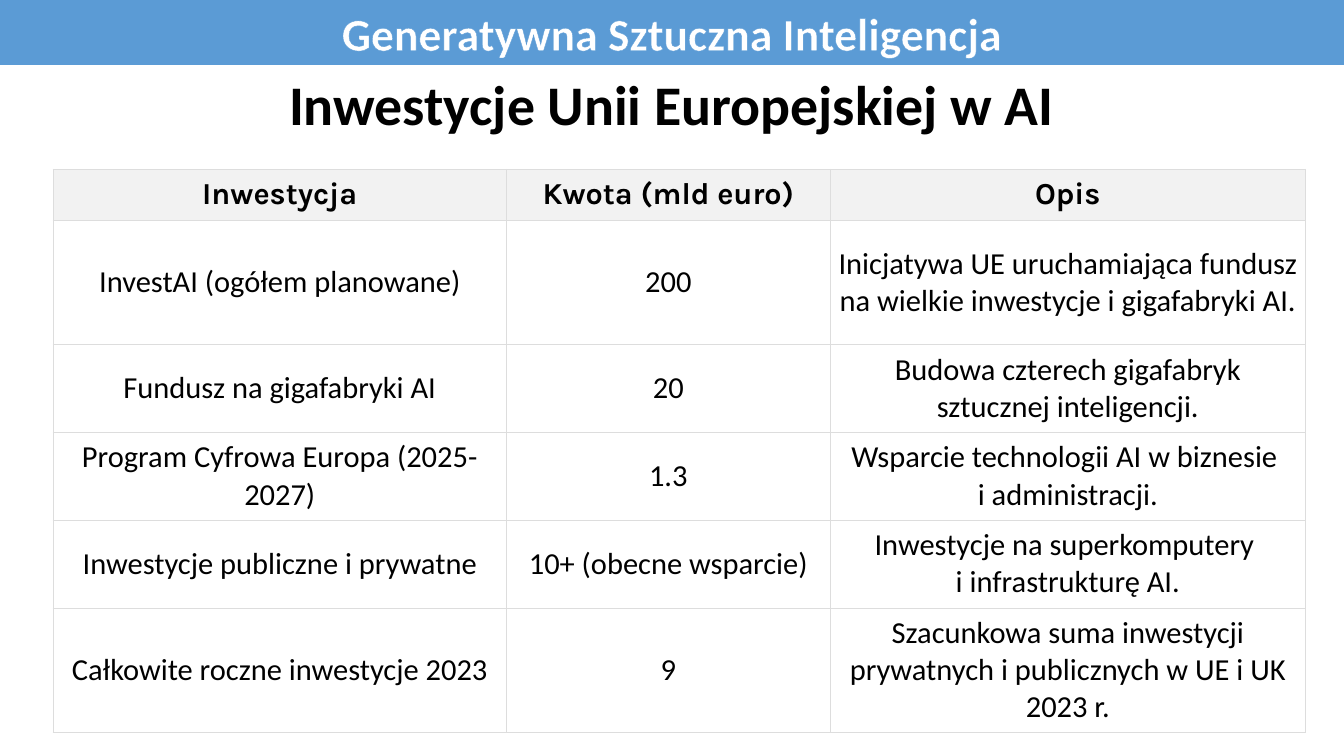
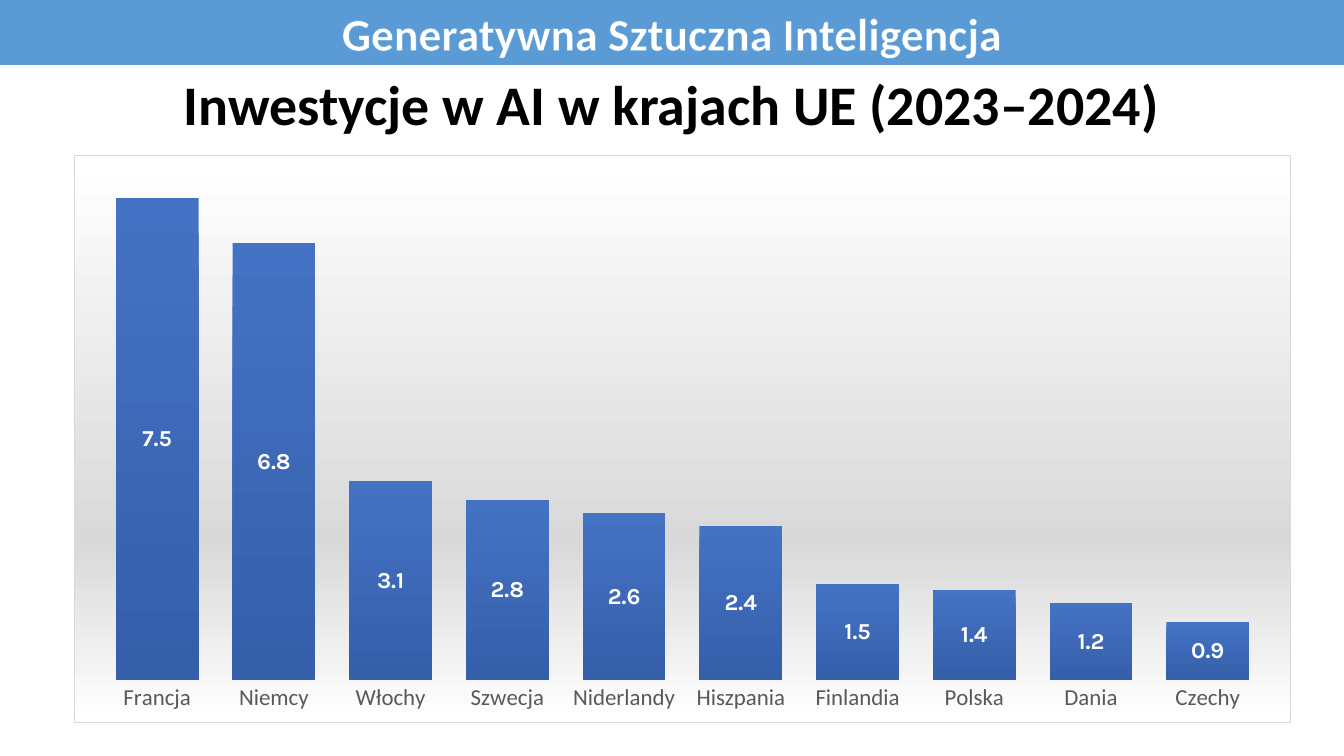
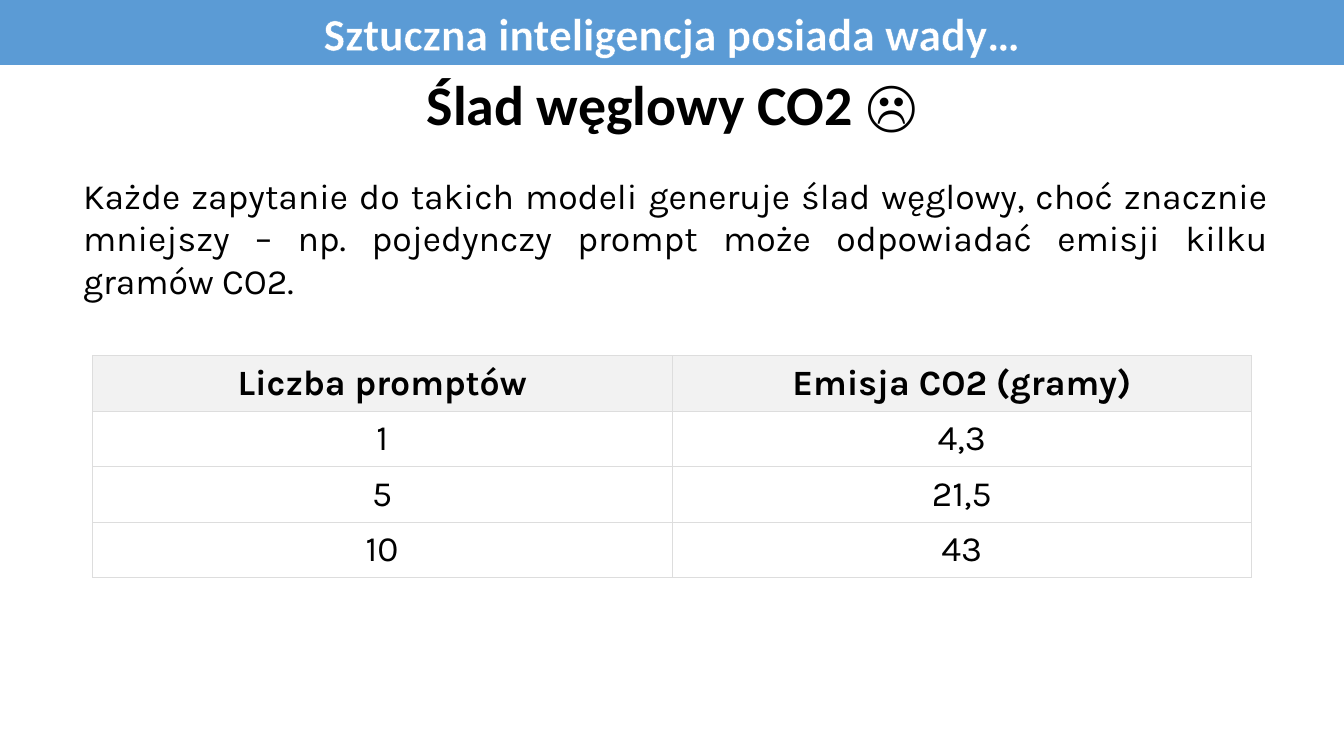
from lxml import etree
from pptx import Presentation
from pptx.chart.data import CategoryChartData
from pptx.dml.color import RGBColor
from pptx.enum.chart import XL_CHART_TYPE as CHART, XL_LABEL_POSITION as LABEL_POS
from pptx.enum.chart import XL_TICK_LABEL_POSITION as TICK_LABEL, XL_TICK_MARK as TICK
from pptx.enum.shapes import MSO_SHAPE as SHAPE
from pptx.enum.text import MSO_ANCHOR as ANCHOR, MSO_AUTO_SIZE as AUTO_SIZE, PP_ALIGN as ALIGN
from pptx.oxml import parse_xml
from pptx.oxml.ns import nsdecls, qn
from pptx.util import Inches, Pt

COLORS = {
    "band": "5B9BD5", "white": "FFFFFF", "text": "000000", "axis": "595959",
    "header": "F2F2F2", "border": "DDDDDD", "frame": "D9D9D9",
    "bar_top": "4472C4", "bar_bottom": "355FA9",
}
BODY, ACCENT = "Calibri", "Karla"
WIDTH, HEIGHT = 14.7, 8.27
BAND_H, TITLE_H = 0.71, 0.84
CELL_INSET = Inches(0.07)

INVESTMENTS = [
    ["Inwestycja", "Kwota (mld euro)", "Opis"],
    ["InvestAI (ogółem planowane)", "200",
     "Inicjatywa UE uruchamiająca fundusz na wielkie inwestycje i gigafabryki AI."],
    ["Fundusz na gigafabryki AI", "20", "Budowa czterech gigafabryk sztucznej inteligencji."],
    ["Program Cyfrowa Europa (2025-2027)", "1.3",
     "Wsparcie technologii AI w biznesie \ni administracji."],
    ["Inwestycje publiczne i prywatne", "10+ (obecne wsparcie)",
     "Inwestycje na superkomputery \ni infrastrukturę AI."],
    ["Całkowite roczne inwestycje 2023", "9",
     "Szacunkowa suma inwestycji prywatnych i publicznych w UE i UK 2023 r."],
]
COUNTRIES = {
    "Francja": 7.5, "Niemcy": 6.8, "Włochy": 3.1, "Szwecja": 2.8, "Niderlandy": 2.6,
    "Hiszpania": 2.4, "Finlandia": 1.5, "Polska": 1.4, "Dania": 1.2, "Czechy": 0.9,
}
EMISSIONS = [
    ["Liczba promptów", "Emisja CO2 (gramy)"],
    ["1", "4,3"], ["5", "21,5"], ["10", "43"],
]
FOOTPRINT = ("Każde zapytanie do takich modeli generuje ślad węglowy, choć znacznie mniejszy "
             "– np. pojedynczy prompt może odpowiadać emisji kilku gramów CO2.")


def rgb(name):
    return RGBColor.from_string(COLORS[name])


def line_xml(tag, color, width):
    return (f'<{tag} {nsdecls("a")} w="{Pt(width)}"><a:solidFill>'
            f'<a:srgbClr val="{COLORS[color]}"/></a:solidFill></{tag}>')


def set_font(font, size, color="text", name=BODY, bold=False):
    font.size, font.name, font.bold = Pt(size), name, bold
    font.color.rgb = rgb(color)


def write(tf, text, align=ALIGN.CENTER, outline=None, **fmt):
    """Fill the first paragraph; each newline becomes a line break."""
    p = tf.paragraphs[0]
    p.alignment = align
    for i, line in enumerate(text.split("\n")):
        if i:
            p.add_line_break()
        r = p.add_run()
        r.text = line
        set_font(r.font, **fmt)
        if outline:
            r.font._element.insert(0, parse_xml(line_xml("a:ln", outline, 0.8)))


def add_text(slide, box, text, **fmt):
    tf = slide.shapes.add_textbox(*map(Inches, box)).text_frame
    tf.word_wrap = True
    tf.auto_size = AUTO_SIZE.SHAPE_TO_FIT_TEXT
    write(tf, text, **fmt)


def add_page(prs, band, title):
    """Add a blank slide with the shared top band and title."""
    slide = prs.slides.add_slide(prs.slide_layouts[6])
    sp = slide.shapes.add_shape(SHAPE.RECTANGLE, 0, 0, Inches(WIDTH), Inches(BAND_H))
    sp.shadow.inherit = False
    sp.fill.solid()
    sp.fill.fore_color.rgb = rgb("band")
    sp.line.fill.background()
    sp.text_frame.word_wrap = True
    write(sp.text_frame, band, size=36, color="white", bold=True, outline="band")
    add_text(slide, (0, BAND_H, WIDTH, TITLE_H), title, size=44, bold=True)
    return slide


def style_cell(cell, header):
    cell.vertical_anchor = ANCHOR.MIDDLE
    cell.margin_left = cell.margin_right = CELL_INSET
    cell.margin_top = cell.margin_bottom = CELL_INSET
    tc_pr = cell._tc.get_or_add_tcPr()
    for side in ("lnL", "lnR", "lnT", "lnB"):
        tc_pr.append(parse_xml(line_xml(f"a:{side}", "border", 0.6)))
    if header:
        cell.fill.solid()
        cell.fill.fore_color.rgb = rgb("header")
    else:
        cell.fill.background()


def add_grid(slide, left, top, cols, rows, data, size, body_font):
    frame = slide.shapes.add_table(len(rows), len(cols), Inches(left), Inches(top),
                                   Inches(sum(cols)), Inches(sum(rows)))
    table = frame.table
    table.first_row = table.horz_banding = False
    for column, width in zip(table.columns, cols):
        column.width = Inches(width)
    for i, (row, height) in enumerate(zip(table.rows, rows)):
        row.height = Inches(height)
        header = i == 0
        for cell, text in zip(row.cells, data[i]):
            style_cell(cell, header)
            write(cell.text_frame, text, size=size, bold=header,
                  name=ACCENT if header else body_font)


def fill_chart_frame(chart):
    """Give the chart area its vertical gradient and thin border."""
    sp_pr = parse_xml(f'<c:spPr {nsdecls("c", "a")}><a:gradFill><a:gsLst/>'
                      f'<a:lin ang="5400000" scaled="0"/></a:gradFill></c:spPr>')
    stops = sp_pr.find(".//" + qn("a:gsLst"))
    for pos, color in ((0, "white"), (68, "frame"), (100, "white")):
        gs = etree.SubElement(stops, qn("a:gs"), pos=str(pos * 1000))
        etree.SubElement(gs, qn("a:srgbClr"), val=COLORS[color])
    sp_pr.append(parse_xml(line_xml("a:ln", "frame", 0.75)))
    chart._chartSpace.find(qn("c:chart")).addnext(sp_pr)


def add_columns(slide, box, values):
    data = CategoryChartData()
    data.categories = list(values)
    data.add_series("Series 1", list(values.values()))
    chart = slide.shapes.add_chart(CHART.COLUMN_CLUSTERED, *map(Inches, box), data).chart
    set_font(chart.font, 10)
    chart.has_legend = chart.has_title = False
    fill_chart_frame(chart)

    chart.value_axis.visible = False
    chart.value_axis.has_major_gridlines = False
    chart.value_axis.minimum_scale = 0
    axis = chart.category_axis
    axis.major_tick_mark = axis.minor_tick_mark = TICK.NONE
    axis.tick_label_position = TICK_LABEL.NEXT_TO_AXIS
    axis.format.line.fill.background()
    set_font(axis.tick_labels.font, 18, "axis")

    plot = chart.plots[0]
    plot.gap_width = 41
    plot.vary_by_categories = False
    series = plot.series[0]
    fill = series.format.fill
    fill.gradient()
    fill.gradient_angle = 270
    for stop, color in zip(fill.gradient_stops, ("bar_top", "bar_bottom")):
        stop.color.rgb = rgb(color)
    labels = series.data_labels
    labels.show_value = True
    labels.position = LABEL_POS.CENTER
    set_font(labels.font, 18, "white", ACCENT, True)


def main():
    prs = Presentation()
    prs.slide_width, prs.slide_height = Inches(WIDTH), Inches(HEIGHT)

    s = add_page(prs, "Generatywna Sztuczna Inteligencja", "Inwestycje Unii Europejskiej w AI")
    add_grid(s, 0.58, 1.85, [4.96, 3.54, 5.2], [0.56, 1.36, 0.96, 0.96, 0.96, 1.36],
             INVESTMENTS, 24, BODY)

    s = add_page(prs, "Generatywna Sztuczna Inteligencja",
                 "Inwestycje w AI w krajach UE (2023–2024)")
    add_columns(s, (0.81, 1.69, 13.31, 6.22), COUNTRIES)

    s = add_page(prs, "Sztuczna inteligencja posiada wady…", "Ślad węglowy CO2 ☹")
    add_text(s, (0.81, 1.85, 13.15, 1.51), FOOTPRINT, align=ALIGN.JUSTIFY, size=28, name=ACCENT)
    add_grid(s, 1.01, 3.89, [6.34] * 2, [0.6] * 4, EMISSIONS, 28, ACCENT)

    prs.save("out.pptx")


if __name__ == "__main__":
    main()
